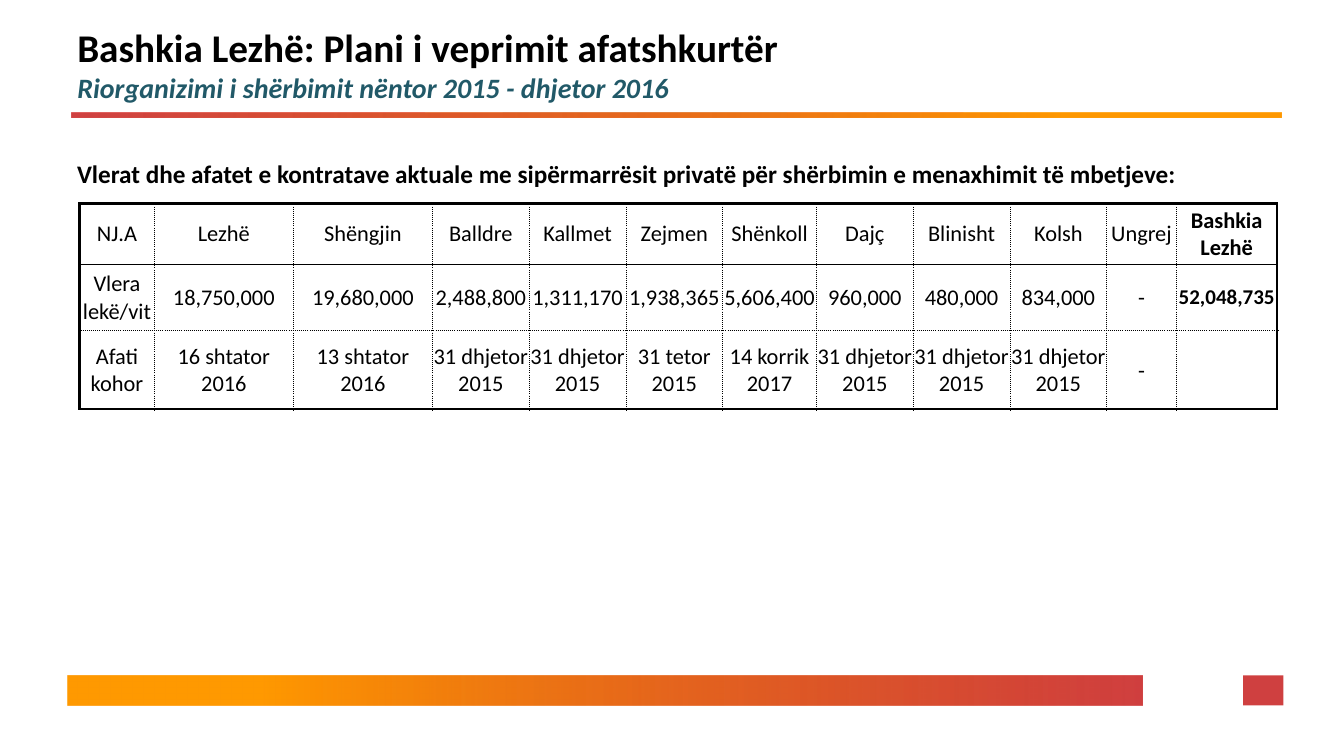
from lxml.etree import SubElement
from pptx import Presentation
from pptx.dml.color import RGBColor
from pptx.enum.shapes import MSO_SHAPE as Preset
from pptx.enum.text import MSO_ANCHOR as Anchor, MSO_AUTO_SIZE as AutoSize, PP_ALIGN as Align
from pptx.oxml import parse_xml
from pptx.oxml.ns import nsdecls, qn
from pptx.util import Inches, Pt

BLACK, TEAL, RED, ORANGE = "000000", "215968", "C00000", "FF9900"
OUTER, SOLID, DOTTED = (2, "solid"), (0.5, "solid"), (0.5, "dot")

COLUMN_SHARES = [5.55, 10.35, 10.35, 7.2, 7.2, 7.2, 6.98, 7.2, 7.2, 7.2, 5.18, 7.5]
ROW_SHARES = [8, 8.8, 10.4]
CONTRACTS = [
    ["NJ.A", "Lezhë", "Shëngjin", "Balldre", "Kallmet", "Zejmen", "Shënkoll",
     "Dajç", "Blinisht", "Kolsh", "Ungrej", "Bashkia Lezhë"],
    ["Vlera lekë/vit", "18,750,000", "19,680,000", "2,488,800", "1,311,170", "1,938,365",
     "5,606,400", "960,000", "480,000", "834,000", "-", "52,048,735"],
    ["Afati kohor", "16 shtator 2016", "13 shtator 2016", "31 dhjetor 2015",
     "31 dhjetor 2015", "31 tetor 2015", "14 korrik 2017", "31 dhjetor 2015",
     "31 dhjetor 2015", "31 dhjetor 2015", "-", ""],
]


def color(value):
    """Turn a hex string into a colour."""
    return RGBColor.from_string(value)


def apply(target, values):
    """Set every attribute named in a dict of format values."""
    for name, value in values.items():
        setattr(target, name, value)


class SlideBuilder:
    """Hold the style and the current slide; lengths are percent of the slide's size."""

    font_name = "Calibri"

    def __init__(self, presentation):
        """Add a title-only slide to the presentation."""
        self.width, self.height = presentation.slide_width, presentation.slide_height
        self.slide = presentation.slides.add_slide(presentation.slide_layouts[5])

    def across(self, share):
        """Convert a share of the width to a length."""
        return int(self.width * share / 100)

    def down(self, share):
        """Convert a share of the height to a length."""
        return int(self.height * share / 100)

    def box(self, left, top, width, height):
        """Convert four shares to a position and size."""
        return self.across(left), self.down(top), self.across(width), self.down(height)

    def run(self, paragraph, text, size, hex_color=BLACK, **values):
        """Add a formatted run to a paragraph."""
        run = paragraph.add_run()
        run.text = text
        apply(run.font, {"name": self.font_name, "size": Pt(size), **values})
        run.font.color.rgb = color(hex_color)

    def bar(self, place, angle=None, opacity=75):
        """Draw a red bar, fading to orange when an angle is given."""
        shape = self.slide.shapes.add_shape(Preset.RECTANGLE, *self.box(*place))
        shape.shadow.inherit = False
        shape.line.fill.background()
        properties = shape._element.spPr
        if angle is None:
            shape.fill.solid()
            shape.fill.fore_color.rgb = color(RED)
        else:
            shape.fill.gradient()
            shape.fill.gradient_angle = angle
            stops = properties.find(".//" + qn("a:gsLst"))
            stops.clear()
            for position, value in [(0, RED), (82, ORANGE), (98, ORANGE)]:
                stop = SubElement(stops, qn("a:gs"), pos=str(position * 1000))
                SubElement(stop, qn("a:srgbClr"), val=value)
        red = properties.find(".//" + qn("a:srgbClr"))
        SubElement(red, qn("a:alpha"), val=str(opacity * 1000))

    def title(self, place, heading, subtitle):
        """Place the title with its subtitle on a second line."""
        shape = self.slide.shapes.title
        apply(shape, dict(zip(("left", "top", "width", "height"), self.box(*place))))
        apply(shape.text_frame, {"auto_size": AutoSize.NONE, "word_wrap": True,
                                 "vertical_anchor": Anchor.MIDDLE})
        paragraph = shape.text_frame.paragraphs[0]
        paragraph.alignment = Align.LEFT
        self.run(paragraph, heading, 28, bold=True)
        paragraph.add_line_break()
        self.run(paragraph, subtitle, 20, TEAL, bold=True, italic=True)

    def text(self, place, text):
        """Add a bold lead-in line."""
        frame = self.slide.shapes.add_textbox(*self.box(*place)).text_frame
        apply(frame, {"word_wrap": True, "auto_size": AutoSize.SHAPE_TO_FIT_TEXT})
        paragraph = frame.paragraphs[0]
        apply(paragraph, {"alignment": Align.JUSTIFY, "line_spacing": 1.15,
                          "space_after": Pt(10)})
        self.run(paragraph, text, 18, bold=True)

    def borders(self, cell, sides):
        """Draw the left, right, top and bottom borders of a cell."""
        properties = cell._tc.get_or_add_tcPr()
        for index, (side, (points, dash)) in enumerate(zip("LRTB", sides)):
            properties.insert(index, parse_xml(
                f'<a:ln{side} {nsdecls("a")} w="{Pt(points)}"><a:solidFill>'
                f'<a:srgbClr val="{BLACK}"/></a:solidFill>'
                f'<a:prstDash val="{dash}"/></a:ln{side}>'))

    def table(self, left, top, columns, rows, values):
        """Add the framed table, its last column in bold."""
        place = self.box(left, top, sum(columns), sum(rows))
        table = self.slide.shapes.add_table(len(rows), len(columns), *place).table
        apply(table, {"first_row": False, "horz_banding": False})
        for column, share in zip(table.columns, columns):
            column.width = self.across(share)
        for row, share in zip(table.rows, rows):
            row.height = self.down(share)
        upright = [OUTER, *[DOTTED] * (len(columns) - 1), OUTER]
        level = [OUTER, SOLID, DOTTED, OUTER]
        edge = Inches(0.01)
        for y, texts in enumerate(values):
            for x, text in enumerate(texts):
                cell = table.cell(y, x)
                apply(cell, {"vertical_anchor": Anchor.MIDDLE, "margin_left": edge,
                             "margin_right": edge, "margin_top": edge, "margin_bottom": 0})
                cell.fill.background()
                self.borders(cell, upright[x:x + 2] + level[y:y + 2])
                if text:
                    paragraph = cell.text_frame.paragraphs[0]
                    paragraph.alignment = Align.CENTER
                    total = x == len(columns) - 1
                    self.run(paragraph, text, 15 if total and y else 16, bold=total)


def main():
    """Build and save the slide."""
    presentation = Presentation()
    apply(presentation, {"slide_width": Inches(13.33), "slide_height": Inches(7.5)})
    builder = SlideBuilder(presentation)
    builder.bar((92.5, 89.33, 3, 4))
    builder.bar((5, 89.33, 80, 4), angle=180)
    builder.bar((5.33, 14.93, 90, 0.67), angle=0, opacity=74)
    builder.title((5, 2.13, 90, 12.5), "Bashkia Lezhë: Plani i veprimit afatshkurtër",
                  "Riorganizimi i shërbimit nëntor 2015 - dhjetor 2016")
    builder.text((5, 19.73, 90, 5.73), "Vlerat dhe afatet e kontratave aktuale me "
                 "sipërmarrësit privatë për shërbimin e menaxhimit të mbetjeve:")
    builder.table(5.93, 26.93, COLUMN_SHARES, ROW_SHARES, CONTRACTS)
    presentation.save("out.pptx")


if __name__ == "__main__":
    main()
